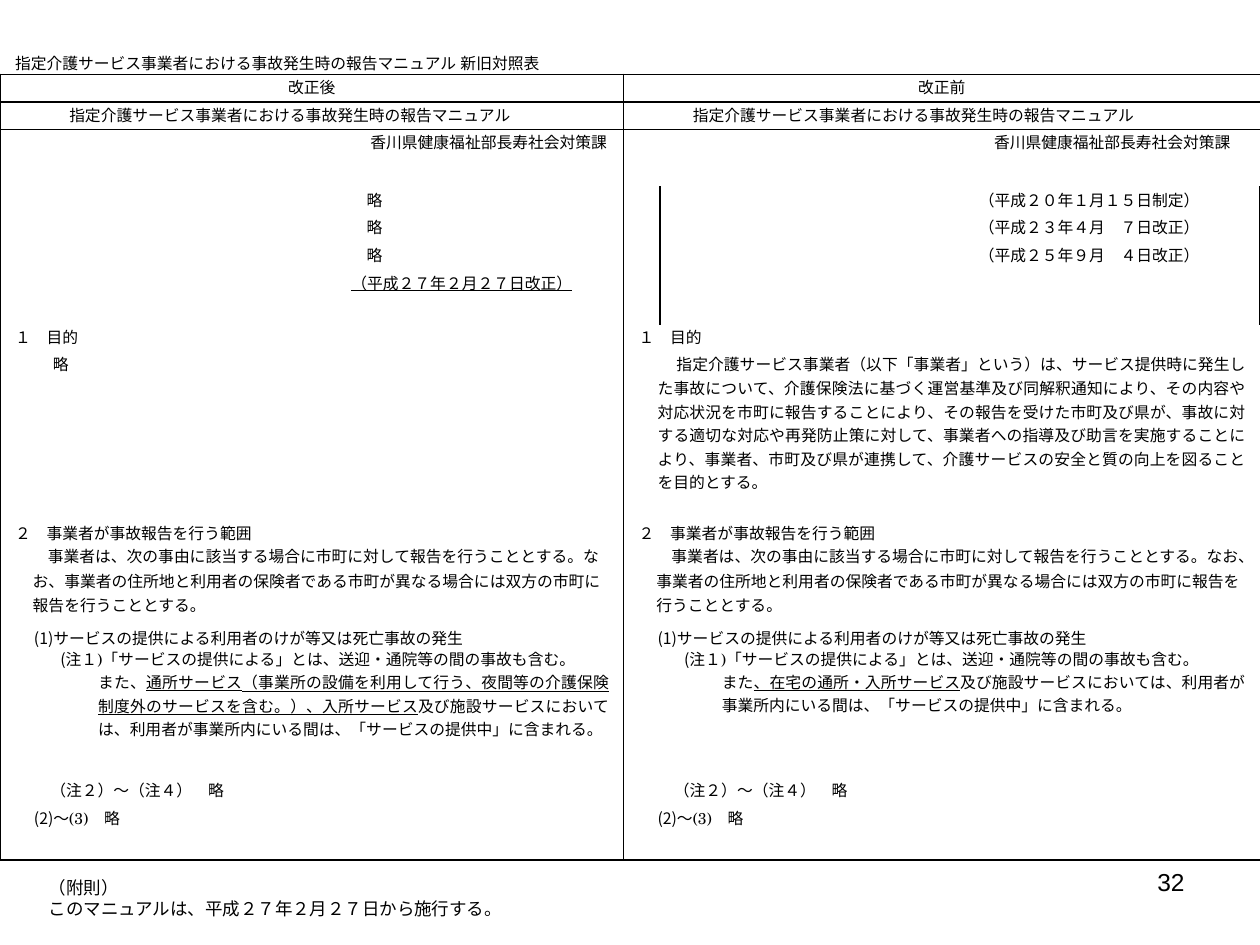
from dataclasses import dataclass

import lxml.etree
import pptx
import pptx.dml.color
import pptx.enum.lang
import pptx.enum.text
import pptx.oxml.ns
import pptx.util

Inches = pptx.util.Inches
Pt = pptx.util.Pt
ALIGN = pptx.enum.text.PP_ALIGN
ANCHOR = pptx.enum.text.MSO_ANCHOR
qn = pptx.oxml.ns.qn

COLORS = {"ink": "000000"}
SERIF = "TeX Gyre Schola"
SANS = "Noto Sans CJK JP"
NO_GRID_STYLE = "{2D5ABB26-0587-4C30-8999-92F81FD0307C}"
BODY_SIZE = 9


@dataclass(frozen=True)
class Span:
    text: str
    font: str = SERIF
    underline: bool = False


@dataclass(frozen=True)
class Line:
    spans: tuple[Span, ...]
    align: ALIGN = ALIGN.LEFT
    left: float = 0
    first: float = 0
    spacing: float | None = 14.2


@dataclass(frozen=True)
class Row:
    height: float
    after: tuple[Line, ...] = ()
    before: tuple[Line, ...] = ()
    merged: bool = True


def plain(text: str, **layout) -> Line:
    return Line((Span(text),), **layout)


def justified(*spans: Span, left: float = 0, first: float = 0, spacing: float | None = None) -> Line:
    return Line(spans, ALIGN.JUSTIFY, left, first, spacing)


def same(height: float, *lines: Line) -> Row:
    return Row(height, lines, lines)


# Wording shared by both versions
MANUAL = "指定介護サービス事業者における事故発生時の報告マニュアル"
PURPOSE = (
    "指定介護サービス事業者（以下「事業者」という）は、サービス提供時に発生した事故について、"
    "介護保険法に基づく運営基準及び同解釈通知により、その内容や対応状況を市町に報告することにより、"
    "その報告を受けた市町及び県が、事故に対する適切な対応や再発防止策に対して、"
    "事業者への指導及び助言を実施することにより、事業者、市町及び県が連携して、"
    "介護サービスの安全と質の向上を図ることを目的とする。"
)
SCOPE = (
    "事業者は、次の事由に該当する場合に市町に対して報告を行うこととする。なお、"
    "事業者の住所地と利用者の保険者である市町が異なる場合には双方の市町に報告を行うこととする。"
)
OMITTED = plain("略", left=0.12)
NOTE_1 = justified(
    Span("(", SANS), Span("注１)「サービスの提供による」とは、送迎・通院等の間の事故も含む。"), left=0.36)
NOTE_END = Span("及び施設サービスにおいては、利用者が事業所内にいる間は、「サービスの提供中」に含まれる。")
NOTE_AFTER = justified(
    Span("また、"),
    Span("通所サービス", underline=True),
    Span("（事業所の設備を利用して行う、夜間等の介護保険制度外のサービスを含む。）、", SANS, True),
    Span("入所サービス", underline=True),
    NOTE_END, left=0.66)
NOTE_BEFORE = justified(
    Span("また"), Span("、在宅の通所・入所サービス", underline=True), NOTE_END, left=0.66)


def purpose(text: str) -> tuple[Line, ...]:
    return (justified(Span(text), left=0.15, first=0.15, spacing=13.5),)


# Table rows under the caption
COLUMNS = [0.29, 0.44, 1.94, 2.28, 0.29, 0.47, 1.94, 2.35]
HALF = 4
CAPTION_HEIGHT = 0.4
STEP = 0.22
ROWS = [
    Row(STEP, (plain("改正後", align=ALIGN.CENTER),), (plain("改正前", align=ALIGN.CENTER),)),
    same(STEP, plain(MANUAL, left=0.58, first=-0.15)),
    same(0.45, justified(Span("香川県健康福祉部長寿社会対策課"), left=3.65, first=-0.83, spacing=13.5)),
    *(Row(STEP, (OMITTED,), (plain(date),), merged=False)
      for date in ("（平成２０年１月１５日制定）", "（平成２３年４月　７日改正）", "（平成２５年９月　４日改正）")),
    Row(STEP, (Line((Span("（平成２７年２月２７日改正）", underline=True),)),), merged=False),
    Row(STEP, merged=False),
    same(STEP, justified(Span("１　目的"), spacing=13.5)),
    Row(1.34, purpose("略"), purpose(PURPOSE)),
    same(0.17, justified(Span("２　事業者が事故報告を行う範囲"))),
    same(0.66, plain(SCOPE, left=0.14, first=0.12)),
    same(0.17, justified(
        Span("(1)", SANS), Span("サービスの提供による利用者のけが等又は死亡事故の発生"), left=0.15)),
    Row(1.03, (NOTE_1, NOTE_AFTER), (NOTE_1, NOTE_BEFORE)),
    same(STEP, plain("（注２）～（注４）　略", left=0.73, first=-0.45)),
    same(STEP, Line((Span("(2)", SANS), Span("～(3)　略")), left=0.73, first=-0.58)),
    Row(STEP),
]


def write_lines(frame, lines: tuple[Line, ...], size: float = BODY_SIZE) -> None:
    for index, line in enumerate(lines):
        paragraph = frame.paragraphs[0] if index == 0 else frame.add_paragraph()
        paragraph.alignment = line.align
        if line.spacing:
            paragraph.line_spacing = Pt(line.spacing)
        properties = paragraph._p.get_or_add_pPr()
        properties.set("marL", str(Inches(line.left)))
        properties.set("indent", str(Inches(line.first)))
        for span in line.spans:
            run = paragraph.add_run()
            run.text = span.text
            font = run.font
            font.size = Pt(size)
            font.name = span.font
            font.underline = span.underline
            font.language_id = pptx.enum.lang.MSO_LANGUAGE_ID.JAPANESE
            font.color.rgb = pptx.dml.color.RGBColor.from_string(COLORS["ink"])
            lxml.etree.SubElement(run._r.rPr, qn("a:ea"), typeface=span.font)


def format_cell(cell, sides: list[str]) -> None:
    cell.margin_left = cell.margin_right = Inches(0.12)
    cell.margin_top = cell.margin_bottom = 0
    properties = cell._tc.get_or_add_tcPr()
    for side in sides:
        border = lxml.etree.SubElement(properties, qn(f"a:ln{side}"), w=str(Pt(1)))
        fill = lxml.etree.SubElement(border, qn("a:solidFill"))
        lxml.etree.SubElement(fill, qn("a:srgbClr"), val=COLORS["ink"])
    cell.fill.background()
    # Keeps empty cells from stretching their row
    lxml.etree.SubElement(
        cell.text_frame.paragraphs[0]._p, qn("a:endParaRPr"), sz=str(BODY_SIZE * 100))


def border_sides(row: int, column: int) -> list[str]:
    rules = {
        "L": row > 0 and column % HALF == 0,
        "R": row > 0 and column % HALF == HALF - 1,
        "T": row in (1, 2),
        "B": row in (0, 1, len(ROWS)),
    }
    return [side for side, drawn in rules.items() if drawn]


def draw_comparison(slide) -> None:
    heights = [CAPTION_HEIGHT, *(row.height for row in ROWS)]
    frame = slide.shapes.add_table(
        len(heights), len(COLUMNS), 0, Inches(0.19), Inches(10), Inches(sum(heights)))
    table = frame.table
    table.first_row = table.horz_banding = False
    table._tbl.tblPr.find(qn("a:tableStyleId")).text = NO_GRID_STYLE
    for column, width in zip(table.columns, COLUMNS):
        column.width = Inches(width)
    for row_index, height in enumerate(heights):
        table.rows[row_index].height = Inches(height)
        for column_index in range(len(COLUMNS)):
            format_cell(table.cell(row_index, column_index), border_sides(row_index, column_index))

    # Caption across the full width
    caption = table.cell(0, 0)
    caption.merge(table.cell(0, len(COLUMNS) - 1))
    caption.vertical_anchor = ANCHOR.BOTTOM
    write_lines(caption.text_frame, (plain(f"{MANUAL} 新旧対照表"),))

    # Revised version on the left, former version on the right
    for row_index, row in enumerate(ROWS, start=1):
        for start, lines in ((0, row.after), (HALF, row.before)):
            last = start + HALF - 1
            cell = table.cell(row_index, start if row.merged else last)
            if row.merged:
                cell.merge(table.cell(row_index, last))
            write_lines(cell.text_frame, lines)


def draw_text(slide, left: float, top: float, width: float, height: float,
              lines: tuple[Line, ...], size: float, anchor: ANCHOR) -> None:
    frame = slide.shapes.add_textbox(
        Inches(left), Inches(top), Inches(width), Inches(height)).text_frame
    frame.word_wrap = True
    frame.vertical_anchor = anchor
    write_lines(frame, lines, size)


def main() -> None:
    deck = pptx.Presentation()
    deck.slide_width, deck.slide_height = Inches(10), Inches(7.5)
    slide = deck.slides.add_slide(deck.slide_layouts[6])

    # Page number, comparison table and supplementary provision
    page_number = Line((Span("32", "Arial"),), ALIGN.RIGHT, spacing=None)
    draw_text(slide, 7.17, 6.83, 2.33, 0.52, (page_number,), 14, ANCHOR.TOP)
    draw_comparison(slide)
    provision = tuple(
        plain(text, first=0.29, spacing=None)
        for text in ("（附則）", "このマニュアルは、平成２７年２月２７日から施行する。"))
    draw_text(slide, 0, 6.88, 10, 0.5, provision, 10, ANCHOR.MIDDLE)
    deck.save("out.pptx")


if __name__ == "__main__":
    main()
